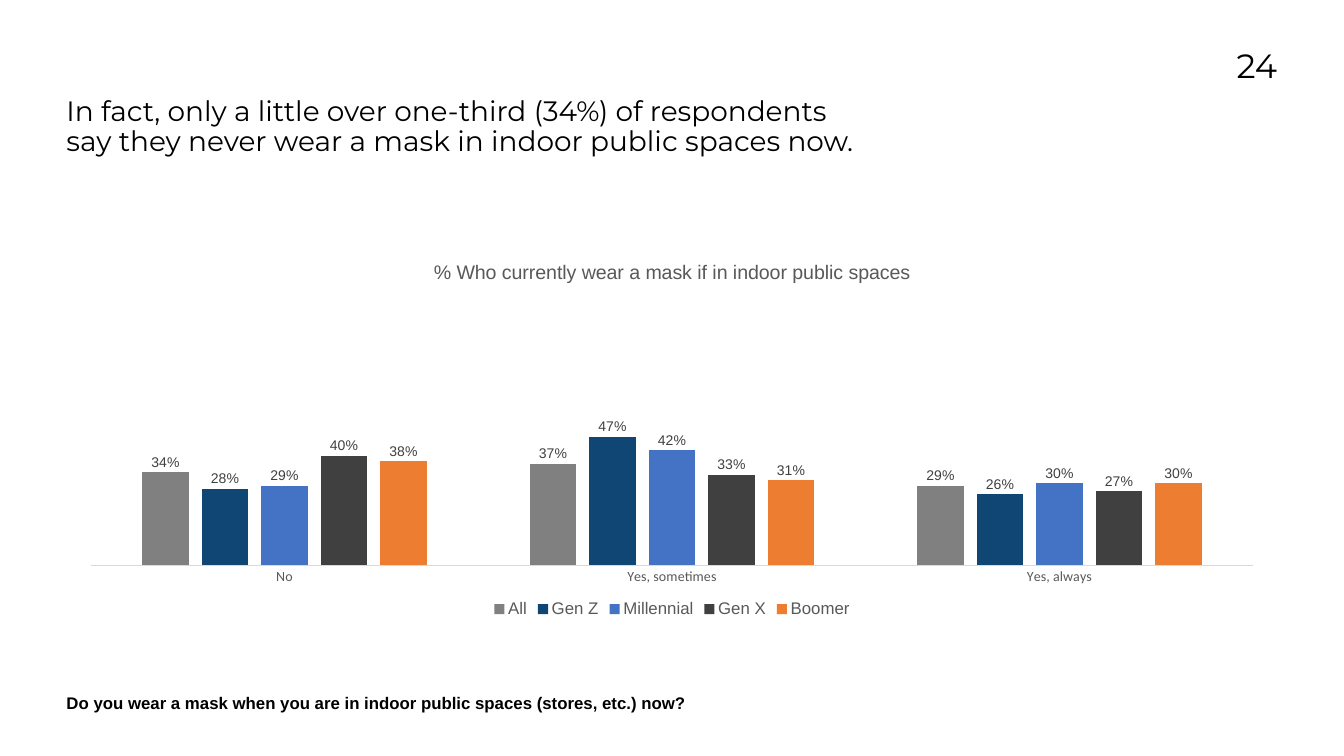
from pptx import Presentation
from pptx.chart.data import CategoryChartData
from pptx.dml.color import RGBColor
from pptx.enum.chart import XL_CHART_TYPE as CT, XL_LABEL_POSITION as LP
from pptx.enum.chart import XL_LEGEND_POSITION as LEG, XL_TICK_MARK as TM
from pptx.enum.text import MSO_ANCHOR, PP_ALIGN
from pptx.oxml import parse_xml
from pptx.oxml.ns import nsdecls, qn
from pptx.util import Pt

COLORS = {
    "text": "000000", "muted": "595959", "label": "404040", "axis": "D9D9D9",
    "All": "808080", "Gen Z": "104674", "Millennial": "4472C4",
    "Gen X": "404040", "Boomer": "ED7D31",
}
ANSWERS = ["No", "Yes, sometimes", "Yes, always"]
SHARES = {
    "All": (0.34, 0.37, 0.29),
    "Gen Z": (0.28, 0.47, 0.26),
    "Millennial": (0.29, 0.42, 0.30),
    "Gen X": (0.40, 0.33, 0.27),
    "Boomer": (0.38, 0.31, 0.30),
}
LEFT = 95


def rgb(name):
    return RGBColor.from_string(COLORS[name])


def set_font(font, size, color="muted", name="Arial", bold=False):
    font.size, font.name, font.bold = Pt(size), name, bold
    font.color.rgb = rgb(color)


def add_text(slide, text, box, size, name="Montserrat", bold=False,
             align=PP_ALIGN.LEFT, spacing=1.0):
    tf = slide.shapes.add_textbox(*map(Pt, box)).text_frame
    tf.word_wrap = True
    tf.vertical_anchor = MSO_ANCHOR.TOP
    tf.margin_left = tf.margin_top = tf.margin_right = tf.margin_bottom = 0
    p = tf.paragraphs[0]
    p.alignment, p.line_spacing = align, spacing
    r = p.add_run()
    r.text = text
    set_font(r.font, size, "text", name, bold)


def set_plot_layout(chart, **fractions):
    plot_area = chart._chartSpace.chart.plotArea
    for old in plot_area.findall(qn("c:layout")):
        plot_area.remove(old)
    sizes = "".join(f'<c:{k} val="{v}"/>' for k, v in fractions.items())
    plot_area.insert(0, parse_xml(
        f'<c:layout {nsdecls("c")}><c:manualLayout><c:layoutTarget val="inner"/>'
        f'<c:xMode val="edge"/><c:yMode val="edge"/>{sizes}'
        '</c:manualLayout></c:layout>'))


def style_axes(chart):
    axis = chart.category_axis
    axis.major_tick_mark = axis.minor_tick_mark = TM.NONE
    axis.format.line.color.rgb = rgb("axis")
    axis.format.line.width = Pt(0.75)
    set_font(axis.tick_labels.font, 20, name="Calibri")
    values = chart.value_axis
    values.minimum_scale, values.maximum_scale = 0, 1
    values.has_major_gridlines = False
    values.visible = False


def style_series(series):
    series.format.fill.solid()
    series.format.fill.fore_color.rgb = rgb(series.name)
    labels = series.data_labels
    labels.show_value = True
    labels.position = LP.OUTSIDE_END
    labels.number_format, labels.number_format_is_linked = "0%", False
    set_font(labels.font, 20, "label")


def add_column_chart(slide, title, box):
    data = CategoryChartData(number_format="0%")
    data.categories = ANSWERS
    for name, shares in SHARES.items():
        data.add_series(name, shares)
    chart = slide.shapes.add_chart(CT.COLUMN_CLUSTERED, *map(Pt, box), data).chart
    set_font(chart.font, 10, "text", "Calibri")
    chart.has_title = True
    p = chart.chart_title.text_frame.paragraphs[0]
    r = p.add_run()
    r.text = title
    set_font(r.font, 28)
    chart.has_legend = True
    chart.legend.position = LEG.BOTTOM
    chart.legend.include_in_layout = False
    set_font(chart.legend.font, 24)
    plot = chart.plots[0]
    plot.gap_width, plot.overlap, plot.vary_by_categories = 219, -27, False
    style_axes(chart)
    for series in plot.series:
        style_series(series)
    set_plot_layout(chart, x=0.02, y=0.12, w=0.96, h=0.73)


def main():
    prs = Presentation()
    prs.slide_width, prs.slide_height = Pt(1920), Pt(1080)
    slide = prs.slides.add_slide(prs.slide_layouts[6])
    add_text(slide, "24", (1662.5, 63.5, 162, 118), 48, align=PP_ALIGN.RIGHT)
    add_column_chart(slide, "% Who currently wear a mask if in indoor public spaces",
                     (LEFT, 351.5, 1730, 537))
    add_text(slide, "In fact, only a little over one-third (34%) of respondents "
             "say they never wear a mask in indoor public spaces now.",
             (LEFT, 139, 1153, 150), 40, spacing=0.9)
    add_text(slide, "Do you wear a mask when you are in indoor public spaces "
             "(stores, etc.) now?",
             (LEFT, 975.5, 1045, 47), 24, name="Arial", bold=True, spacing=1.5)
    prs.save("out.pptx")


if __name__ == "__main__":
    main()
